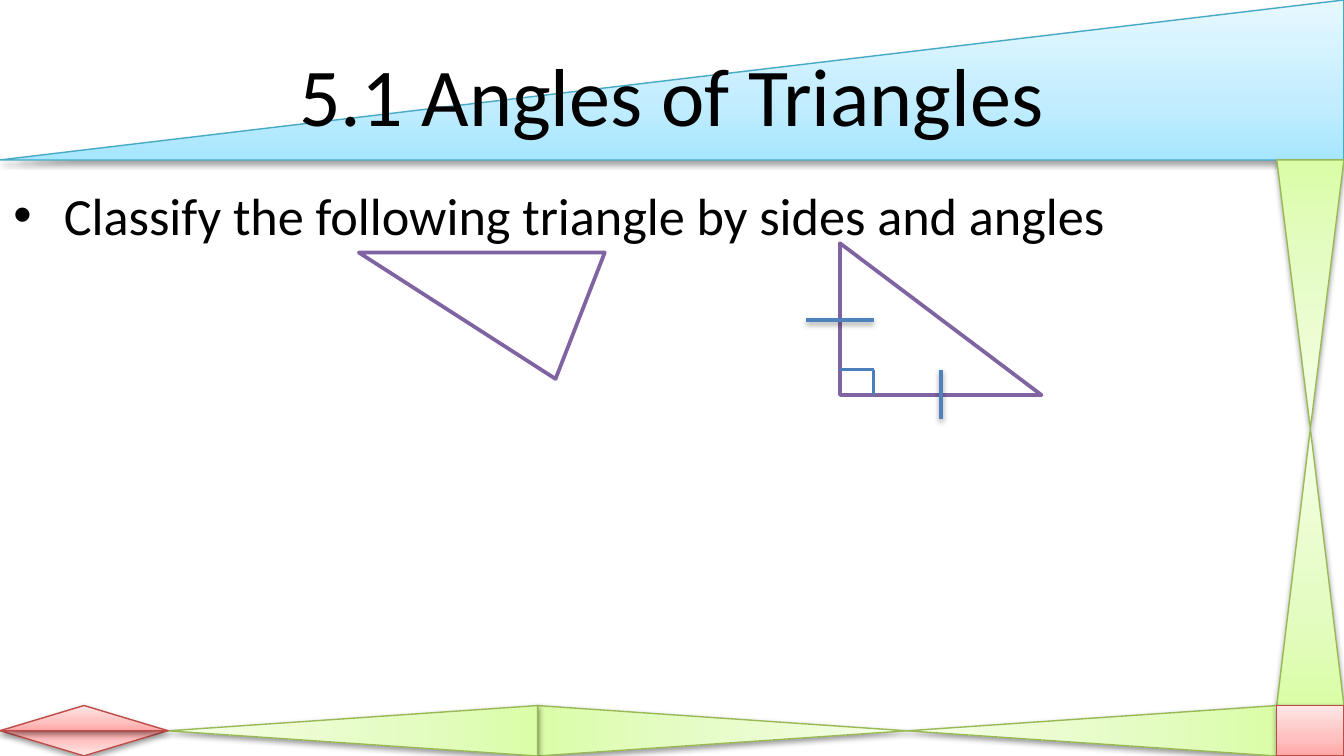
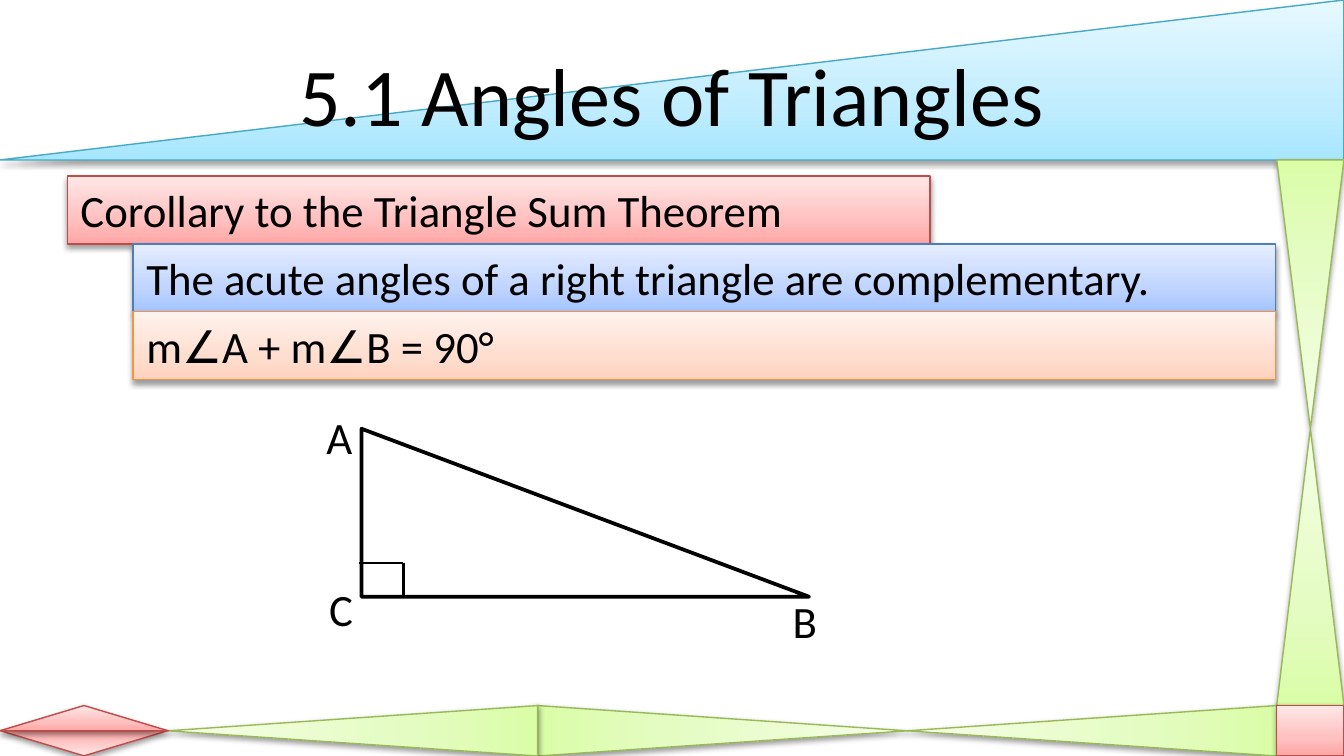
from dataclasses import dataclass
from lxml.etree import SubElement
from pptx import Presentation
from pptx.dml.color import RGBColor
from pptx.enum.shapes import MSO_CONNECTOR, MSO_SHAPE
from pptx.enum.text import MSO_ANCHOR, MSO_AUTO_SIZE, PP_ALIGN
from pptx.oxml.ns import qn
from pptx.util import Inches, Pt

W, H = 10, 5.625
BAND_H, SIDE_W, FOOT_H, GEM_W = 1.19, 0.5, 0.375, 1.25
FOOT_Y, SIDE_X = H - FOOT_H, W - SIDE_W
MID_Y = 3.19
FOOT_COL = (SIDE_X - GEM_W) / 3


@dataclass(frozen=True)
class Theme:
    """Colours, gradients and type sizes of the deck."""
    font: str = "Calibri"
    ink: str = "000000"
    paper: str = "FFFFFF"
    purple: str = "8064A2"
    tick: str = "4F81BD"
    corner: str = "4B7EBC"
    sky: tuple = ("A7E6FF", "C1EDFF", "E7F8FF", "46AAC5")
    lime: tuple = ("DAFDA7", "E4FCC2", "F5FFE7", "98B955")
    rose: tuple = ("FFA6A5", "FFC0BF", "FFE7E7", "BF4C48")
    blue: tuple = ("A4C4FF", "BFD4FF", "E6EEFF", "4B7EBC")
    peach: tuple = ("FFD2BD", "FFDED0", "FFF2ED", "F69240")
    title: int = 44
    body: int = 28
    note: int = 24
    thin: float = 0.75
    mark: float = 1.5
    bold: float = 2


T = Theme()
TITLE = "5.1 Angles of Triangles"
TASK = "Classify the following triangle by sides and angles"
TRI, RIGHT, RECT = MSO_SHAPE.ISOSCELES_TRIANGLE, MSO_SHAPE.RIGHT_TRIANGLE, MSO_SHAPE.RECTANGLE

DECOR = [
    (RIGHT, (0, 0, W, BAND_H), T.sky, dict(flip="flipH")),
    (TRI, (SIDE_X, BAND_H, SIDE_W, MID_Y - BAND_H), T.lime, dict(flip="flipV")),
    (TRI, (SIDE_X, MID_Y, SIDE_W, FOOT_Y - MID_Y), T.lime, {}),
    *[(TRI, (GEM_W + col * FOOT_COL, FOOT_Y, FOOT_COL, FOOT_H), T.lime, turn)
      for col, turn in ((2, dict(rot=270)), (1, dict(rot=90, flip="flipH")), (0, dict(rot=270)))],
    (RECT, (SIDE_X, FOOT_Y, SIDE_W, FOOT_H), T.rose, {}),
    (TRI, (0, H - FOOT_H / 2, GEM_W, FOOT_H / 2), T.rose, dict(flip="flipV")),
    (TRI, (0, FOOT_Y, GEM_W, FOOT_H / 2), T.rose, {}),
]
TICKS = [(6.5, 2.38, 6, 2.38), (7, 2.75, 7, 3.12)]
CORNER = [(6.25, 2.75), (6.5, 2.75), (6.5, 2.94)]
NOTES = [
    ("Corollary to the Triangle Sum Theorem", 0.5, 6.42, T.rose),
    ("The acute angles of a right triangle are complementary.", 0.99, 8.5, T.blue),
    ("m∠A + m∠B = 90°", 0.99, 8.5, T.peach),
]
NOTE_Y, NOTE_H = 1.31, 0.505
VERTICES = [("A", 2.33, 3), ("C", 2.35, 4.28), ("B", 5.8, 4.37)]
CORNER_C = [(2.67, 4.19), (3, 4.19), (3, 4.44)]


def rgb(code):
    """Return the colour for a hex code."""
    return RGBColor.from_string(code)


def place(sp, box):
    """Move a shape to a box given in inches."""
    sp.left, sp.top, sp.width, sp.height = map(Inches, box)


def write(sp, text, size, align=None, anchor=None, grow=False, wrap=True):
    """Put one formatted paragraph in a shape."""
    tf = sp.text_frame
    tf.word_wrap = wrap
    if anchor is not None:
        tf.vertical_anchor = anchor
    if grow:
        tf.auto_size = MSO_AUTO_SIZE.SHAPE_TO_FIT_TEXT
    p = tf.paragraphs[0]
    if align is not None:
        p.alignment = align
    r = p.add_run()
    r.text = text
    r.font.name, r.font.size = T.font, Pt(size)
    r.font.color.rgb = rgb(T.ink)


def add_shadow(effects):
    """Add the soft drop shadow to an effect list."""
    shadow = SubElement(effects, qn("a:outerShdw"), blurRad="40000", dist="20000",
                        dir="5400000", rotWithShape="0")
    color = SubElement(shadow, qn("a:srgbClr"), val=T.ink)
    SubElement(color, qn("a:alpha"), val="38000")


def shade(sp, colors):
    """Fill a shape with a three-stop gradient rising from its base."""
    sp.fill.gradient()
    sp.fill.gradient_angle = 90
    stops = sp.element.spPr.find(qn("a:gradFill")).find(qn("a:gsLst"))
    for stop in list(stops):
        stops.remove(stop)
    for pos, color in zip((0, 35, 100), colors):
        stop = SubElement(stops, qn("a:gs"), pos=str(pos * 1000))
        SubElement(stop, qn("a:srgbClr"), val=color)


def add_figure(shapes, kind, box, line, width, rot=0, flip=None):
    """Add an outlined white shape whose box is the area it covers."""
    x, y, w, h = box
    if rot:
        x, y, w, h = x + (w - h) / 2, y + (h - w) / 2, h, w
    sp = shapes.add_shape(kind, *map(Inches, (x, y, w, h)))
    sp.rotation = rot
    if flip:
        sp.element.spPr.find(qn("a:xfrm")).set(flip, "1")
    sp.fill.solid()
    sp.fill.fore_color.rgb = rgb(T.paper)
    sp.line.color.rgb, sp.line.width = rgb(line), Pt(width)
    sp.shadow.inherit = False
    return sp


def add_panel(shapes, kind, box, colors, **turn):
    """Add a gradient shape with a shadow."""
    *fill, line = colors
    sp = add_figure(shapes, kind, box, line, T.thin, **turn)
    shade(sp, fill)
    add_shadow(sp.element.spPr.find(qn("a:effectLst")))
    return sp


def add_line(shapes, ends, color, width, shadow=False):
    """Add a straight line between two points."""
    line = shapes.add_connector(MSO_CONNECTOR.STRAIGHT, *map(Inches, ends))
    line.line.color.rgb, line.line.width = rgb(color), Pt(width)
    effects = SubElement(line.element.spPr, qn("a:effectLst"))
    if shadow:
        add_shadow(effects)


def add_corner(shapes, points, color):
    """Mark a right angle with a chain of lines."""
    for start, end in zip(points, points[1:]):
        add_line(shapes, start + end, color, T.mark)


def decorate(prs, s):
    """Draw the bands and move them to the slide master."""
    tree = prs.slide_master.shapes.element
    for i, (kind, box, colors, turn) in enumerate(DECOR):
        tree.insert(2 + i, add_panel(s.shapes, kind, box, colors, **turn).element)


def add_slide(prs, layout):
    """Add a slide with the shared title."""
    s = prs.slides.add_slide(prs.slide_layouts[layout])
    place(s.shapes.title, (0, 0.23, W, 0.94))
    write(s.shapes.title, TITLE, T.title, align=PP_ALIGN.CENTER, anchor=MSO_ANCHOR.MIDDLE)
    return s


def classify_slide(prs):
    """Build the slide with two triangles to classify."""
    s = add_slide(prs, 1)
    decorate(prs, s)
    body = s.placeholders[1]
    place(body, (0, 1.31, SIDE_X, 3.71))
    write(body, TASK, T.body)
    obtuse = add_figure(s.shapes, TRI, (2.67, 1.88, 1.83, 0.94), T.purple, T.bold, flip="flipV")
    obtuse.adjustments[0] = 0.8
    group = s.shapes.add_group_shape().shapes
    add_figure(group, RIGHT, (6.25, 1.81, 1.5, 1.13), T.purple, T.bold)
    for ends in TICKS:
        add_line(group, ends, T.tick, T.bold, shadow=True)
    add_corner(group, CORNER, T.corner)


def corollary_slide(prs):
    """Build the slide with the corollary and its right triangle."""
    s = add_slide(prs, 5)
    for row, (text, x, w, colors) in enumerate(NOTES):
        sp = add_panel(s.shapes, RECT, (x, NOTE_Y + row * NOTE_H, w, NOTE_H), colors)
        write(sp, text, T.note, align=PP_ALIGN.LEFT, anchor=MSO_ANCHOR.TOP, grow=True)
    group = s.shapes.add_group_shape().shapes
    add_figure(group, RIGHT, (2.69, MID_Y, 3.33, 1.25), T.ink, T.bold)
    for name, x, y in VERTICES:
        label = group.add_textbox(*map(Inches, (x, y, 0.39, NOTE_H)))
        write(label, name, T.note, grow=True, wrap=False)
    add_corner(group, CORNER_C, T.ink)


def main():
    """Build and save the deck."""
    prs = Presentation()
    prs.slide_width, prs.slide_height = Inches(W), Inches(H)
    classify_slide(prs)
    corollary_slide(prs)
    prs.save("out.pptx")


if __name__ == "__main__":
    main()
